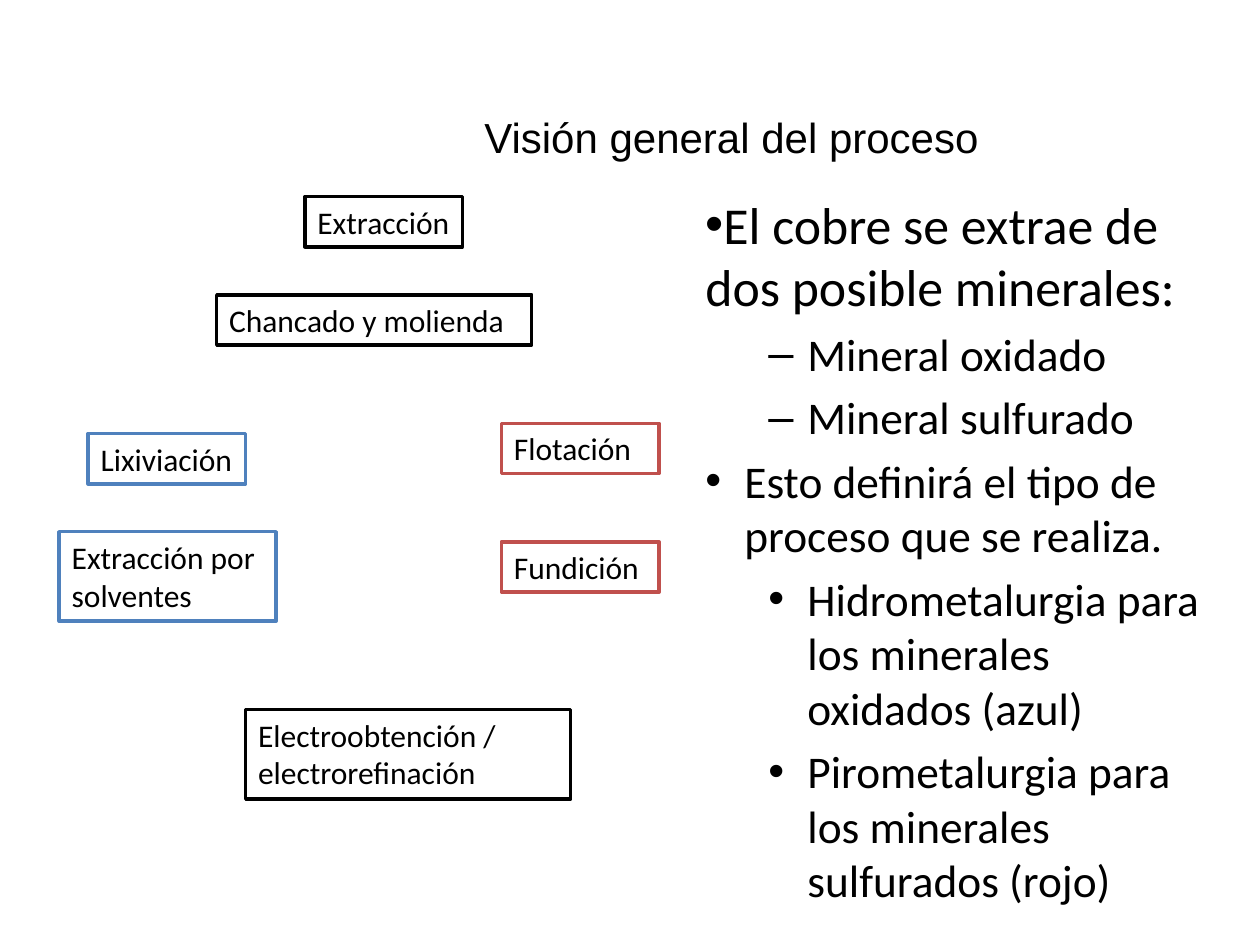
import pptx
import pptx.util
from lxml import etree
from pptx.dml.color import RGBColor
from pptx.enum.shapes import MSO_SHAPE
from pptx.enum.text import MSO_ANCHOR, PP_ALIGN
from pptx.oxml.ns import qn
from pptx.util import Inches, Pt

COLORS = {"text": "000000", "box": "FFFFFF", "common": "000000",
          "hydro": "4F81BD", "pyro": "C0504D"}


def color(name):
    return RGBColor.from_string(COLORS[name])


def set_font(paragraph, face, size):
    paragraph.font.name = face
    paragraph.font.size = Pt(size)
    paragraph.font.color.rgb = color("text")


prs = pptx.Presentation()
prs.slide_width, prs.slide_height = Inches(10), Inches(7.5)
slide = prs.slides.add_slide(prs.slide_layouts[5])

title = slide.shapes.title
title.left, title.top = Inches(2.11), Inches(0.62)
title.width, title.height = Inches(7.39), Inches(0.93)
title.text_frame.text = "Visión general del proceso"
title.text_frame.vertical_anchor = MSO_ANCHOR.MIDDLE
title.text_frame.paragraphs[0].alignment = PP_ALIGN.CENTER
set_font(title.text_frame.paragraphs[0], "Arial", 24)

# Process steps: label, route, left, top, width, height
ONE_LINE, TWO_LINES = 0.4, 0.71
steps = [
    ("Extracción", "common", 2.42, 1.56, 1.25, ONE_LINE),
    ("Chancado y molienda", "common", 1.72, 2.34, 2.5, ONE_LINE),
    ("Lixiviación", "hydro", 0.7, 3.44, 1.25, ONE_LINE),
    ("Extracción por solventes", "hydro", 0.47, 4.22, 1.72, TWO_LINES),
    ("Electroobtención / electrorefinación", "common", 1.95, 5.63, 2.58, TWO_LINES),
    ("Flotación", "pyro", 3.98, 3.36, 1.25, ONE_LINE),
    ("Fundición", "pyro", 3.98, 4.3, 1.25, ONE_LINE),
]
for label, route, left, top, width, height in steps:
    step = slide.shapes.add_shape(MSO_SHAPE.RECTANGLE, Inches(left), Inches(top),
                                  Inches(width), Inches(height))
    step.shadow.inherit = False
    step.fill.solid()
    step.fill.fore_color.rgb = color("box")
    step.line.color.rgb = color(route)
    step.line.width = Pt(2)
    step.text_frame.word_wrap = True
    step.text_frame.vertical_anchor = MSO_ANCHOR.TOP
    step.text_frame.text = label
    step.text_frame.paragraphs[0].alignment = PP_ALIGN.LEFT
    set_font(step.text_frame.paragraphs[0], "Calibri", 18)

# Explanation: text, level, bullet, left margin, hanging indent, size
points = [
    ("El cobre se extrae de dos posible minerales:", 0, "•", 0, 0, 29.6),
    ("Mineral oxidado", 1, "–", 0.81, 0.31, 25.9),
    ("Mineral sulfurado", 1, "–", 0.81, 0.31, 25.9),
    ("Esto definirá el tipo de proceso que se realiza.", 0, "•", 0.31, 0.31, 25.9),
    ("Hidrometalurgia para los minerales oxidados (azul)", 1, "•", 0.81, 0.31, 25.9),
    ("Pirometalurgia para los minerales sulfurados (rojo)", 1, "•", 0.81, 0.31, 25.9),
]
explanation = slide.shapes.add_textbox(Inches(5.5), Inches(1.48),
                                       Inches(4.27), Inches(5.47)).text_frame
explanation.word_wrap = True
for i, (text, level, bullet, margin, hanging, size) in enumerate(points):
    paragraph = explanation.add_paragraph() if i else explanation.paragraphs[0]
    paragraph.text = text
    paragraph.level = level
    properties = paragraph._p.get_or_add_pPr()
    properties.set("marL", str(Inches(margin)))
    properties.set("indent", str(-Inches(hanging)))
    etree.SubElement(properties, qn("a:buFont"), typeface="Arial")
    etree.SubElement(properties, qn("a:buChar"), char=bullet)
    if i:
        paragraph.space_before = Pt(5.2)
    set_font(paragraph, "Calibri", size)

prs.save("out.pptx")
